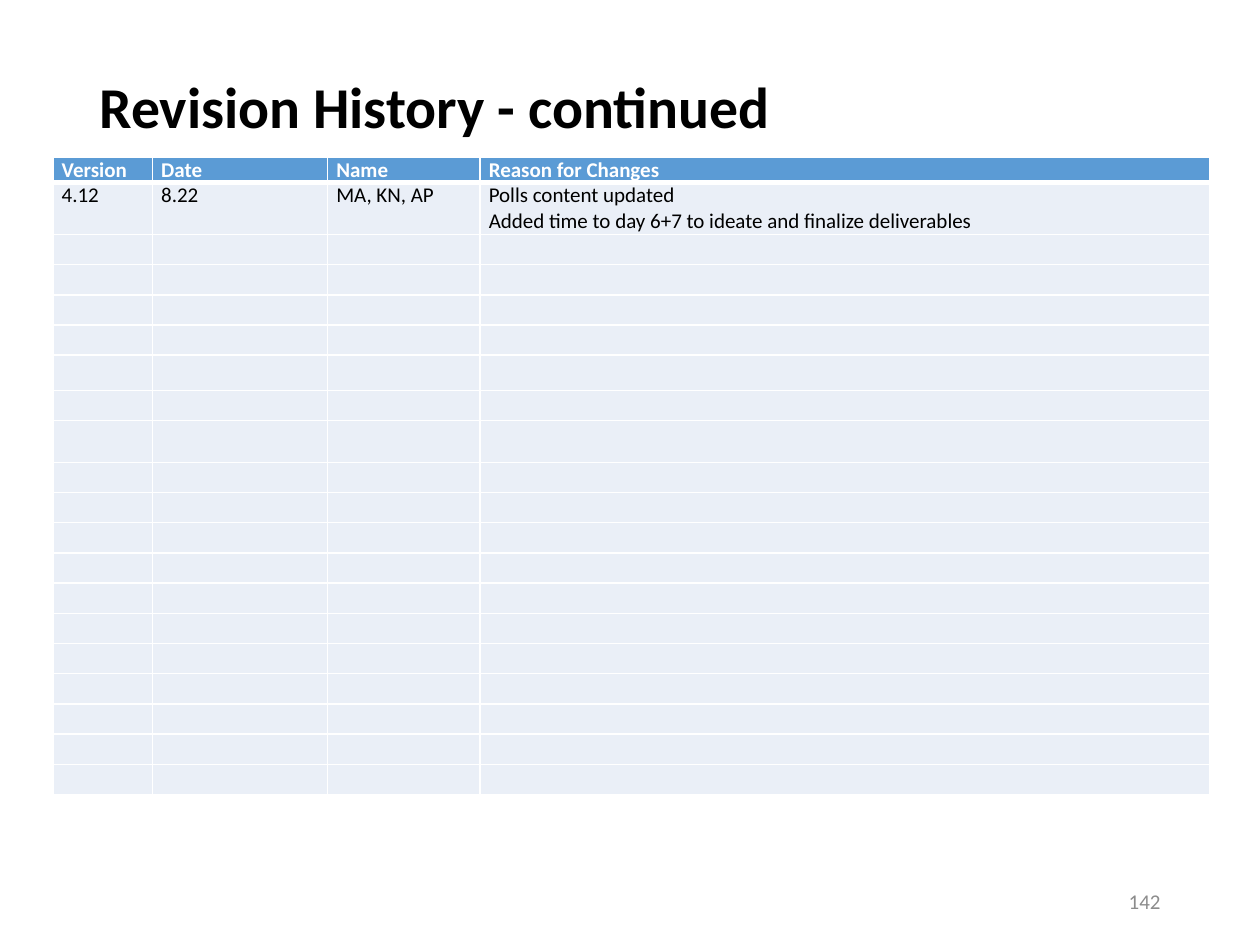
from dataclasses import dataclass

from lxml import etree
from pptx import Presentation
from pptx import util as u
from pptx.dml.color import RGBColor
from pptx.enum import text
from pptx.oxml.ns import qn


@dataclass(frozen=True)
class Theme:
    font: str = "Calibri"
    ink: str = "000000"
    muted: str = "8C8C8C"
    white: str = "FFFFFF"
    header_fill: str = "5B9BD5"
    body_fill: str = "EAEFF7"
    title_size: int = 33
    body_size: int = 12
    rule: int = 1
    header_rule: int = 3


class RevisionSlide:
    def __init__(self, slide, theme):
        self.slide = slide
        self.theme = theme

    def format_runs(self, frame, size, color, bold=False):
        for paragraph in frame.paragraphs:
            for run in paragraph.runs:
                run.font.name = self.theme.font
                run.font.size = u.Pt(size)
                run.font.bold = bold
                run.font.color.rgb = RGBColor.from_string(color)

    def label(self, wording, box, size, color, bold=False, inset_top=0.05,
              anchor=text.MSO_ANCHOR.MIDDLE, align=text.PP_ALIGN.LEFT, spacing=1.0):
        frame = self.slide.shapes.add_textbox(*map(u.Inches, box)).text_frame
        frame.word_wrap = True
        frame.vertical_anchor = anchor
        frame.margin_top = u.Inches(inset_top)
        frame.text = wording
        frame.paragraphs[0].alignment = align
        frame.paragraphs[0].line_spacing = spacing
        self.format_runs(frame, size, color, bold)

    def borders(self, cell, top, bottom):
        properties = cell._tc.get_or_add_tcPr()
        rule = self.theme.rule
        for side, width in (("L", rule), ("R", rule), ("T", top), ("B", bottom)):
            line = etree.SubElement(properties, qn(f"a:ln{side}"), w=str(u.Pt(width)))
            fill = etree.SubElement(line, qn("a:solidFill"))
            etree.SubElement(fill, qn("a:srgbClr"), val=self.theme.white)

    def cell(self, cell, wording, row):
        theme = self.theme
        is_header = row == 0
        cell.margin_left = cell.margin_right = u.Inches(0.07)
        cell.margin_top = cell.margin_bottom = 0
        self.borders(
            cell,
            top=theme.header_rule if row == 1 else theme.rule,
            bottom=theme.header_rule if is_header else theme.rule,
        )
        cell.fill.solid()
        cell.fill.fore_color.rgb = RGBColor.from_string(
            theme.header_fill if is_header else theme.body_fill
        )
        if wording:
            cell.text_frame.text = wording
            self.format_runs(cell.text_frame, theme.body_size,
                             theme.white if is_header else theme.ink, is_header)
        else:
            etree.SubElement(cell.text_frame.paragraphs[0]._p, qn("a:endParaRPr"),
                             sz=str(theme.body_size * 100))

    def table(self, left, top, widths, heights, entries):
        size = (left, top, sum(widths), sum(heights))
        grid = self.slide.shapes.add_table(
            len(heights), len(widths), *map(u.Inches, size)
        ).table
        grid.horz_banding = False
        for column, width in zip(grid.columns, widths):
            column.width = u.Inches(width)
        for index, height in enumerate(heights):
            grid.rows[index].height = u.Inches(height)
            wordings = entries[index] if index < len(entries) else [""] * len(widths)
            for column, wording in enumerate(wordings):
                self.cell(grid.cell(index, column), wording, index)


def main():
    deck = Presentation()
    deck.slide_width, deck.slide_height = u.Inches(10), u.Inches(7.5)
    theme = Theme()
    page = RevisionSlide(deck.slides.add_slide(deck.slide_layouts[6]), theme)

    page.label("Revision History - continued", (0.69, 0.4, 8.62, 1.45),
               theme.title_size, theme.ink, bold=True, inset_top=0.22,
               anchor=text.MSO_ANCHOR.TOP, spacing=0.9)

    revisions = [
        ["Version", "Date", "Name", "Reason for Changes"],
        ["4.12", "8.22", "MA, KN, AP",
         "Polls content updated\n"
         "Added time to day 6+7 to ideate and finalize deliverables"],
    ]
    row_heights = [0.2, 0.41] + [0.24] * 4 + [0.28, 0.24, 0.33] + [0.24] * 11
    page.table(0.42, 1.25, [0.79, 1.39, 1.21, 5.79], row_heights, revisions)

    page.label("142", (7.06, 6.95, 2.25, 0.4), theme.body_size, theme.muted,
               align=text.PP_ALIGN.RIGHT)
    deck.save("out.pptx")


if __name__ == "__main__":
    main()
